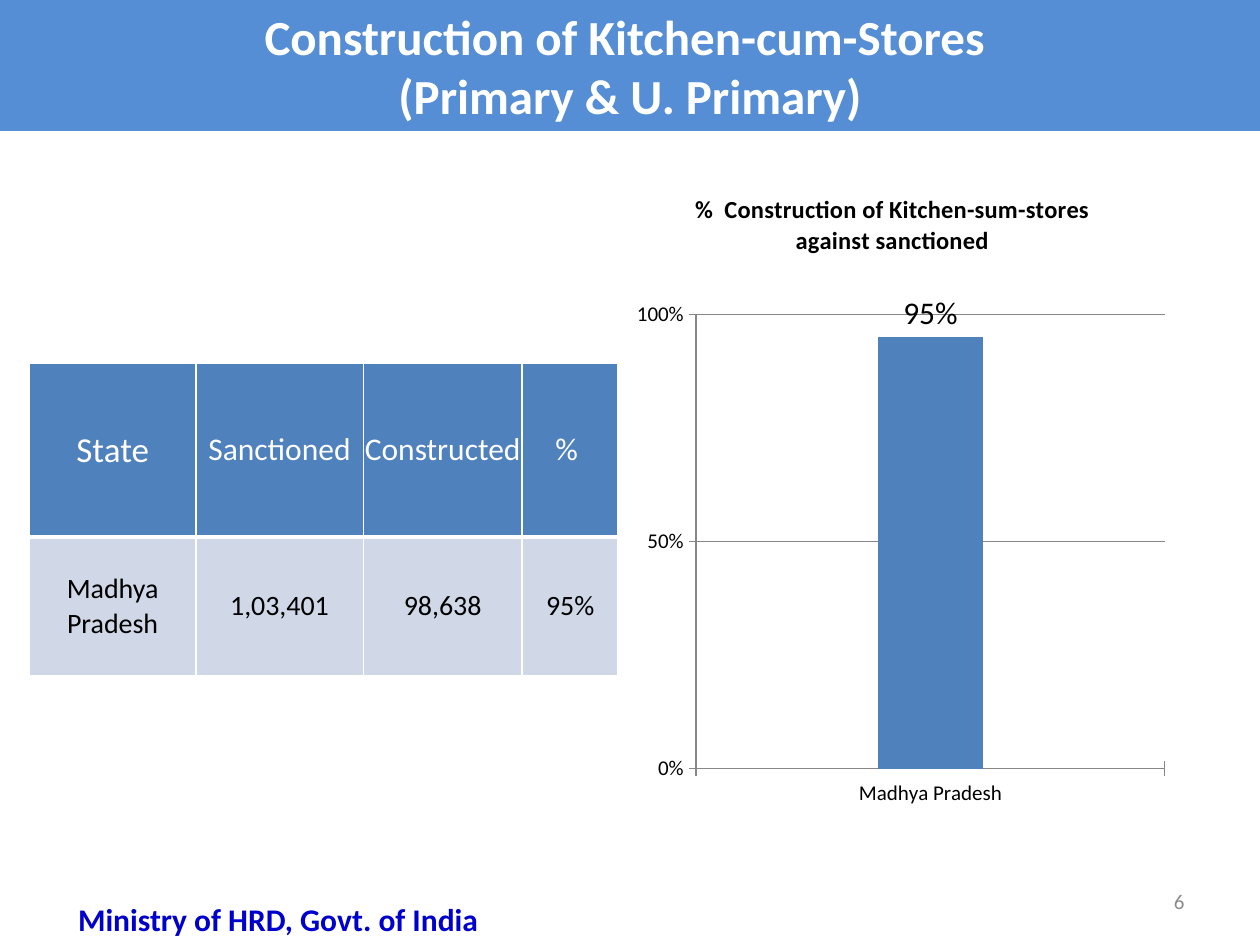
from lxml.etree import SubElement
from pptx import Presentation
from pptx.chart.data import CategoryChartData
from pptx.dml.color import RGBColor
from pptx.enum.chart import XL_CHART_TYPE, XL_LABEL_POSITION, XL_TICK_MARK
from pptx.enum.shapes import MSO_SHAPE
from pptx.enum.text import MSO_ANCHOR, PP_ALIGN
from pptx.oxml import parse_xml
from pptx.oxml.ns import nsdecls, qn
from pptx.util import Pt

WHITE = RGBColor(0xFF, 0xFF, 0xFF)
BLACK = RGBColor(0, 0, 0)
BANNER_BLUE = RGBColor(0x55, 0x8E, 0xD5)
BLUE = RGBColor(0x4F, 0x81, 0xBD)
PALE_BLUE = RGBColor(0xD0, 0xD8, 0xE8)
FOOTER_BLUE = RGBColor(0, 0, 0xCC)
NUMBER_GRAY = RGBColor(0x8C, 0x8C, 0x8C)
AXIS_GRAY = RGBColor(0x87, 0x87, 0x87)


def write(text_frame, text, size, color, bold=False, align=PP_ALIGN.CENTER):
    text_frame.word_wrap = True
    text_frame.text = text
    for paragraph in text_frame.paragraphs:
        paragraph.alignment = align
        paragraph.font.name = "Calibri"
        paragraph.font.size = Pt(size)
        paragraph.font.bold = bold
        paragraph.font.color.rgb = color


def add_border(cell, bottom_width):
    """Draw white cell borders, 1 pt wide except at the bottom."""
    widths = {"lnL": 1, "lnR": 1, "lnT": 1, "lnB": bottom_width}
    for index, (tag, width) in enumerate(widths.items()):
        line = parse_xml(
            f'<a:{tag} {nsdecls("a")} w="{Pt(width)}"><a:solidFill>'
            f'<a:srgbClr val="{WHITE}"/></a:solidFill></a:{tag}>')
        cell._tc.get_or_add_tcPr().insert(index, line)


presentation = Presentation()
presentation.slide_width, presentation.slide_height = Pt(720), Pt(540)
slide = presentation.slides.add_slide(presentation.slide_layouts[6])

# Title banner
banner = slide.shapes.add_shape(MSO_SHAPE.RECTANGLE, 0, 0, Pt(720), Pt(74.9))
banner.shadow.inherit = False
banner.fill.solid()
banner.fill.fore_color.rgb = BANNER_BLUE
banner.line.fill.background()
banner.text_frame.vertical_anchor = MSO_ANCHOR.MIDDLE
write(banner.text_frame, "Construction of Kitchen-cum-Stores \n(Primary & U. Primary)",
      28, WHITE, bold=True)

# Table
rows = [["State", "Sanctioned", "Constructed", "% "],
        ["Madhya Pradesh", "1,03,401", "98,638", "95%"]]
table = slide.shapes.add_table(2, 4, Pt(16.9), Pt(207.5), Pt(336.4), Pt(178.6)).table
for column, width in zip(table.columns, [95, 95.7, 90.8, 54.9]):
    column.width = Pt(width)
for row, height in zip(table.rows, [99.4, 79.2]):
    row.height = Pt(height)
for row_index, row in enumerate(rows):
    header = row_index == 0
    for column_index, text in enumerate(row):
        cell = table.cell(row_index, column_index)
        cell.margin_left = cell.margin_right = cell.margin_top = cell.margin_bottom = 0
        cell.vertical_anchor = MSO_ANCHOR.MIDDLE
        cell.fill.solid()
        cell.fill.fore_color.rgb = BLUE if header else PALE_BLUE
        size = 16 if not header else 20 if text == "State" else 18
        write(cell.text_frame, text, size, WHITE if header else BLACK)
        add_border(cell, bottom_width=3 if header else 1)

# Chart
chart_data = CategoryChartData(number_format="0%")
chart_data.categories = ["Madhya Pradesh"]
chart_data.add_series("Series 1", [0.95])
chart = slide.shapes.add_chart(XL_CHART_TYPE.COLUMN_CLUSTERED, Pt(354.2), Pt(95.8),
                               Pt(311.8), Pt(388.1), chart_data).chart
chart.has_legend = False
chart.font.name = "Calibri"
chart.font.size = Pt(18)
chart.font.color.rgb = BLACK
chart.has_title = True
write(chart.chart_title.text_frame,
      "%  Construction of Kitchen-sum-stores against sanctioned", 14, BLACK, bold=True)
chart.chart_title.include_in_layout = False

for axis in (chart.category_axis, chart.value_axis):
    axis.major_tick_mark = XL_TICK_MARK.CROSS
    axis.tick_labels.font.size = Pt(12)
    axis.format.line.color.rgb = AXIS_GRAY
value_axis = chart.value_axis
value_axis.minimum_scale, value_axis.maximum_scale = 0, 1
value_axis.major_unit = 0.5
value_axis.major_gridlines.format.line.color.rgb = AXIS_GRAY
value_axis.tick_labels.number_format = "0%"
value_axis.tick_labels.number_format_is_linked = False

plot = chart.plots[0]
plot.gap_width = 349
plot.vary_by_categories = False
plot.series[0].format.fill.solid()
plot.series[0].format.fill.fore_color.rgb = BLUE
plot.has_data_labels = True
labels = plot.data_labels
labels.show_value = True
labels.number_format = "0%"
labels.number_format_is_linked = False
labels.position = XL_LABEL_POSITION.OUTSIDE_END

plot_area = chart._chartSpace.chart.plotArea
for old_layout in plot_area.findall(qn("c:layout")):
    plot_area.remove(old_layout)
layout = parse_xml(f'<c:layout {nsdecls("c")}><c:manualLayout/></c:layout>')
for tag, value in [("layoutTarget", "inner"), ("xMode", "edge"), ("yMode", "edge"),
                   ("x", "0.14"), ("y", "0.216"), ("w", "0.86"), ("h", "0.669")]:
    SubElement(layout[0], qn(f"c:{tag}")).set("val", value)
plot_area.insert(0, layout)

# Footer
page_number = slide.shapes.add_textbox(Pt(516), Pt(500.5), Pt(168), Pt(28.75))
page_number.text_frame.vertical_anchor = MSO_ANCHOR.MIDDLE
write(page_number.text_frame, "6", 12, NUMBER_GRAY, align=PP_ALIGN.RIGHT)
ministry = slide.shapes.add_textbox(Pt(18), Pt(511), Pt(282), Pt(29))
write(ministry.text_frame, "Ministry of HRD, Govt. of India", 18, FOOTER_BLUE, bold=True)

presentation.save("out.pptx")
